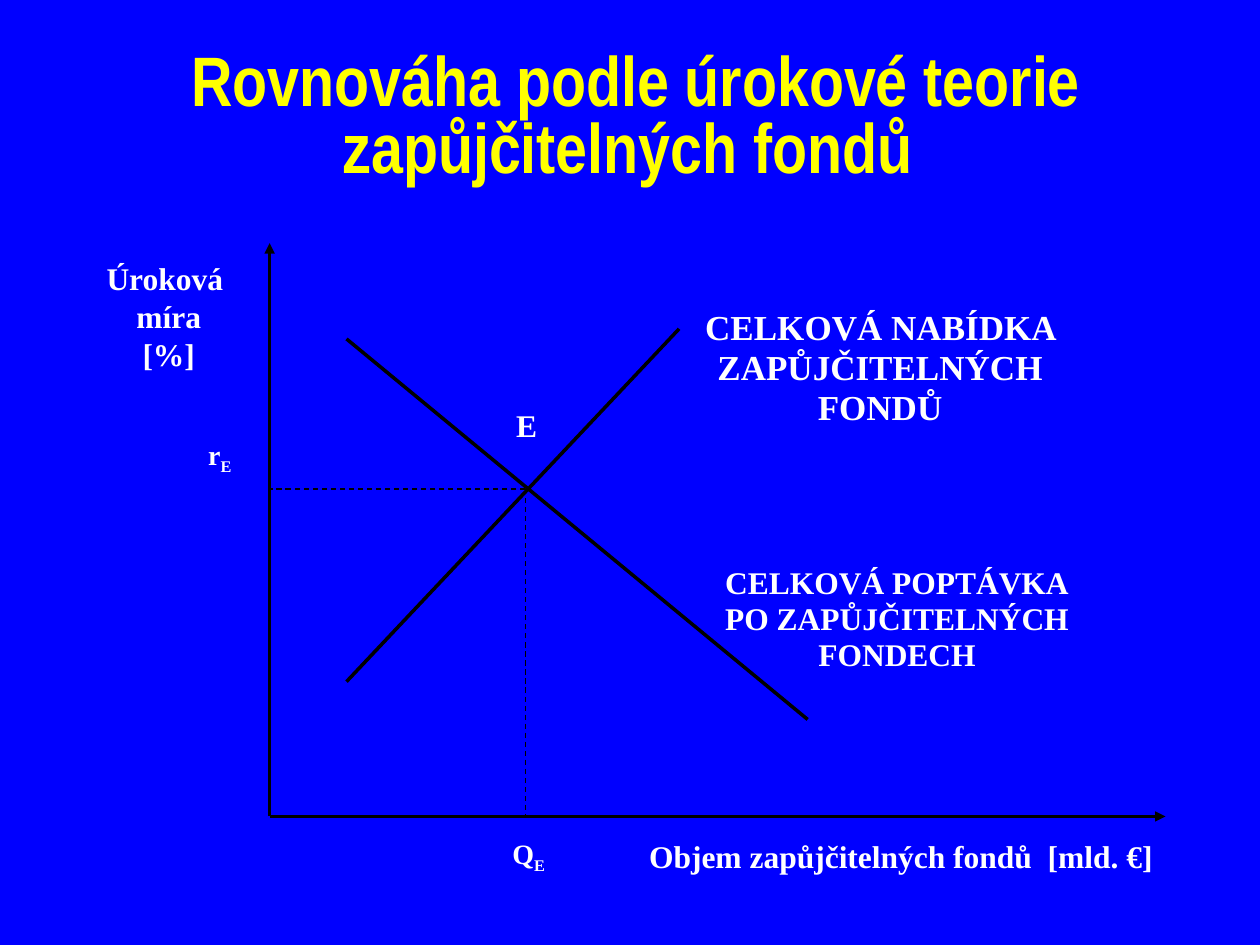
from lxml import etree
from pptx import Presentation
from pptx import util as u
from pptx.dml.color import RGBColor
from pptx.enum import dml, shapes, text
from pptx.oxml.ns import qn

PX = 9144
COLORS = {"background": "0000FF", "title": "FFFF00", "label": "FFFFFF", "line": "000000"}
ALIGN = text.PP_ALIGN


def px(*values):
    return [u.Emu(v * PX) for v in values]


def color(name):
    return RGBColor.from_string(COLORS[name])


def write(tf, content, size=18, font="Times New Roman", fill="label",
          align=ALIGN.CENTER, spacing=None, before=None, sub=None):
    tf.word_wrap = True
    for i, line in enumerate(content.split("\n")):
        p = tf.paragraphs[0] if i == 0 else tf.add_paragraph()
        p.alignment = align
        if spacing:
            p.line_spacing = spacing
        if before:
            p.space_before = u.Pt(before)
        for j, part in enumerate([line, sub] if sub else [line]):
            for k, piece in enumerate(part.split("\v")):
                if k:
                    p.add_line_break()
                r = p.add_run()
                r.text = piece
                r.font.size, r.font.bold, r.font.name = u.Pt(size), True, font
                r.font.color.rgb = color(fill)
                if j:
                    r.font._element.set("baseline", "-25000")


def add_title(s, box):
    sp = s.shapes.title
    sp.left, sp.top, sp.width, sp.height = px(*box)
    sp.text_frame.vertical_anchor = text.MSO_ANCHOR.MIDDLE
    write(sp.text_frame, "Rovnováha podle úrokové teorie zapůjčitelných fondů ",
          size=40, font="Arial Narrow", fill="title", spacing=0.8)


def add_line(s, start, end, width, arrow=False, dash=False):
    sp = s.shapes.add_connector(shapes.MSO_CONNECTOR.STRAIGHT, *px(*start, *end))
    sp.line.color.rgb = color("line")
    sp.line.width = u.Pt(width)
    if dash:
        sp.line.dash_style = dml.MSO_LINE.DASH
    if arrow:
        etree.SubElement(sp.line._get_or_add_ln(), qn("a:tailEnd"), type="triangle")
    etree.SubElement(sp._element.spPr, qn("a:effectLst"))


def add_diagram(s, box):
    x, y, w, h = box

    def at(dx, dy):
        return x + dx, y + dy

    def label(dx, dy, width, height, content, **fmt):
        sp = s.shapes.add_textbox(*px(*at(dx, dy), width, height))
        write(sp.text_frame, content, **fmt)

    origin = at(0, h)
    eq_x, eq_y = 203, 195
    add_line(s, origin, at(0, 0), 1.5, arrow=True)
    add_line(s, origin, at(w, h), 1.5, arrow=True)
    add_line(s, at(61, 348), at(325, 68), 2)
    add_line(s, at(61, 76), at(427, 378), 2)
    for end in (at(eq_x, h), at(0, eq_y)):
        add_line(s, at(eq_x, eq_y), end, 0.75, dash=True)

    label(-163, 8, 166, 180, "Úroková \nmíra\n[%]")
    label(264, h + 11, 447, 66, "Objem zapůjčitelných fondů  [mld. €]", align=ALIGN.RIGHT)
    label(322, 47, 325, 127, "CELKOVÁ NABÍDKA ZAPŮJČITELNÝCH FONDŮ",
          size=20, spacing=0.95, before=3)
    label(325, 251, 346, 117, "CELKOVÁ POPTÁVKA\vPO ZAPŮJČITELNÝCH FONDECH",
          spacing=0.95, before=6)
    label(-116, 149, 153, 100, "r", size=16, before=3, sub="E")
    label(147, h + 11, 117, 76, "Q", size=16, sub="E")
    label(163, 124, 82, 65, "E", before=6)


def main():
    prs = Presentation()
    prs.slide_width, prs.slide_height = px(1000, 750)
    s = prs.slides.add_slide(prs.slide_layouts[5])
    s.background.fill.solid()
    s.background.fill.fore_color.rgb = color("background")
    add_title(s, (83, 28, 843, 134))
    add_diagram(s, (214, 193, 711, 455))
    prs.save("out.pptx")


if __name__ == "__main__":
    main()
